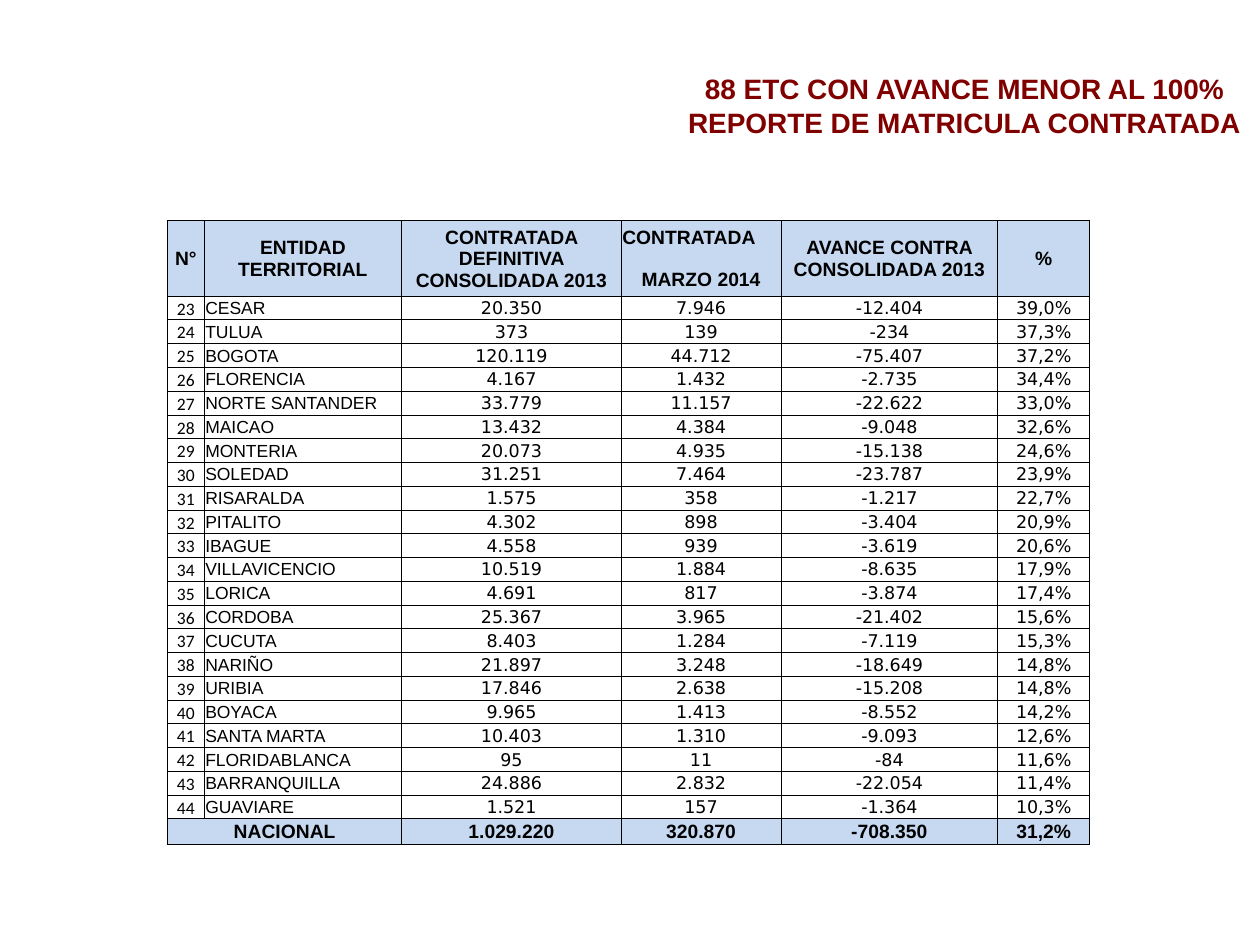
from pptx import Presentation
from pptx.dml.color import RGBColor
from pptx.enum.text import MSO_ANCHOR, MSO_AUTO_SIZE, PP_ALIGN
from pptx.oxml import parse_xml
from pptx.oxml.ns import nsdecls
from pptx.util import Inches, Pt

LEFT, CENTER = PP_ALIGN.LEFT, PP_ALIGN.CENTER
MIDDLE, BOTTOM = MSO_ANCHOR.MIDDLE, MSO_ANCHOR.BOTTOM
FIT_SHAPE = MSO_AUTO_SIZE.SHAPE_TO_FIT_TEXT

BLACK = RGBColor(0x00, 0x00, 0x00)
MAROON = RGBColor(0x80, 0x00, 0x00)
LIGHT_BLUE = RGBColor(0xC6, 0xD9, 0xF1)

TITLE = "88 ETC CON AVANCE MENOR AL 100% REPORTE DE MATRICULA CONTRATADA"
HEADERS = ["N°", "ENTIDAD TERRITORIAL", "CONTRATADA DEFINITIVA CONSOLIDADA 2013",
           "CONTRATADA\nMARZO 2014", "AVANCE CONTRA CONSOLIDADA 2013", "%"]
FIRST_NUMBER = 23
ENTITIES = [
    ("CESAR", "20.350", "7.946", "-12.404", "39,0%"),
    ("TULUA", "373", "139", "-234", "37,3%"),
    ("BOGOTA", "120.119", "44.712", "-75.407", "37,2%"),
    ("FLORENCIA", "4.167", "1.432", "-2.735", "34,4%"),
    ("NORTE SANTANDER", "33.779", "11.157", "-22.622", "33,0%"),
    ("MAICAO", "13.432", "4.384", "-9.048", "32,6%"),
    ("MONTERIA", "20.073", "4.935", "-15.138", "24,6%"),
    ("SOLEDAD", "31.251", "7.464", "-23.787", "23,9%"),
    ("RISARALDA", "1.575", "358", "-1.217", "22,7%"),
    ("PITALITO", "4.302", "898", "-3.404", "20,9%"),
    ("IBAGUE", "4.558", "939", "-3.619", "20,6%"),
    ("VILLAVICENCIO", "10.519", "1.884", "-8.635", "17,9%"),
    ("LORICA", "4.691", "817", "-3.874", "17,4%"),
    ("CORDOBA", "25.367", "3.965", "-21.402", "15,6%"),
    ("CUCUTA", "8.403", "1.284", "-7.119", "15,3%"),
    ("NARIÑO", "21.897", "3.248", "-18.649", "14,8%"),
    ("URIBIA", "17.846", "2.638", "-15.208", "14,8%"),
    ("BOYACA", "9.965", "1.413", "-8.552", "14,2%"),
    ("SANTA MARTA", "10.403", "1.310", "-9.093", "12,6%"),
    ("FLORIDABLANCA", "95", "11", "-84", "11,6%"),
    ("BARRANQUILLA", "24.886", "2.832", "-22.054", "11,4%"),
    ("GUAVIARE", "1.521", "157", "-1.364", "10,3%"),
]
TOTAL = ["NACIONAL", "", "1.029.220", "320.870", "-708.350", "31,2%"]

COL_WIDTHS = [0.29, 1.57, 1.74, 1.27, 1.72, 0.73]
TABLE_HEIGHT, HEADER_HEIGHT, TOTAL_HEIGHT = 4.95, 0.6, 0.2


class SlideBuilder:
    heading_font = "Arial"
    column_fonts = ["Calibri", "Arial"] + ["DejaVu Sans"] * 4
    border_width = Pt(0.5)

    def __init__(self, slide):
        self.slide = slide

    def format_text(self, tf, font, size, color, bold, align):
        for p in tf.paragraphs:
            p.alignment = align
            for r in p.runs:
                r.font.name = font
                r.font.size = Pt(size)
                r.font.bold = bold
                r.font.color.rgb = color

    def title(self, text, left, top, width, height):
        sp = self.slide.shapes.add_textbox(
            Inches(left), Inches(top), Inches(width), Inches(height))
        tf = sp.text_frame
        tf.word_wrap = True
        tf.auto_size = FIT_SHAPE
        tf.text = text
        self.format_text(tf, self.heading_font, 16, MAROON, True, CENTER)

    def borders(self, cell):
        tc_pr = cell._tc.get_or_add_tcPr()
        for side in ("lnL", "lnR", "lnT", "lnB"):
            tc_pr.append(parse_xml(
                f'<a:{side} {nsdecls("a")} w="{self.border_width}"><a:solidFill>'
                f'<a:srgbClr val="{BLACK}"/></a:solidFill></a:{side}>'))

    def cell(self, cell, text, col, is_heading):
        cell.margin_left = cell.margin_right = cell.margin_top = Inches(0.01)
        cell.margin_bottom = 0
        self.borders(cell)
        cell.text_frame.text = text
        if is_heading:
            cell.fill.solid()
            cell.fill.fore_color.rgb = LIGHT_BLUE
            cell.vertical_anchor = MIDDLE
            self.format_text(cell.text_frame, self.heading_font, 11, BLACK, True, CENTER)
        else:
            cell.fill.background()
            cell.vertical_anchor = BOTTOM if col == 0 else MIDDLE
            self.format_text(cell.text_frame, self.column_fonts[col], 10, BLACK, False,
                             LEFT if col == 1 else CENTER)

    def table(self, rows, left, top, col_widths, row_heights):
        """Draw a table whose first and last rows are headings."""
        table = self.slide.shapes.add_table(
            len(rows), len(col_widths), Inches(left), Inches(top),
            Inches(sum(col_widths)), Inches(sum(row_heights))).table
        for column, width in zip(table.columns, col_widths):
            column.width = Inches(width)
        last = len(rows) - 1
        for i, (values, height) in enumerate(zip(rows, row_heights)):
            table.rows[i].height = Inches(height)
            for j, value in enumerate(values):
                self.cell(table.cell(i, j), value, j, i in (0, last))
        table.cell(last, 0).merge(table.cell(last, 1))
        return table


def main():
    prs = Presentation()
    prs.slide_width, prs.slide_height = Inches(10), Inches(7.5)
    builder = SlideBuilder(prs.slides.add_slide(prs.slide_layouts[6]))

    body = [[str(n), *entity] for n, entity in enumerate(ENTITIES, FIRST_NUMBER)]
    body_height = (TABLE_HEIGHT - HEADER_HEIGHT - TOTAL_HEIGHT) / len(body)
    heights = [HEADER_HEIGHT] + [body_height] * len(body) + [TOTAL_HEIGHT]
    table = builder.table([HEADERS, *body, TOTAL], 1.33, 1.75, COL_WIDTHS, heights)

    contracted, month = table.cell(0, 3).text_frame.paragraphs
    contracted.alignment = LEFT
    month.space_before = Pt(12)

    builder.title(TITLE, 5.31, 0.52, 4.69, 0.64)
    prs.save("out.pptx")


if __name__ == "__main__":
    main()
